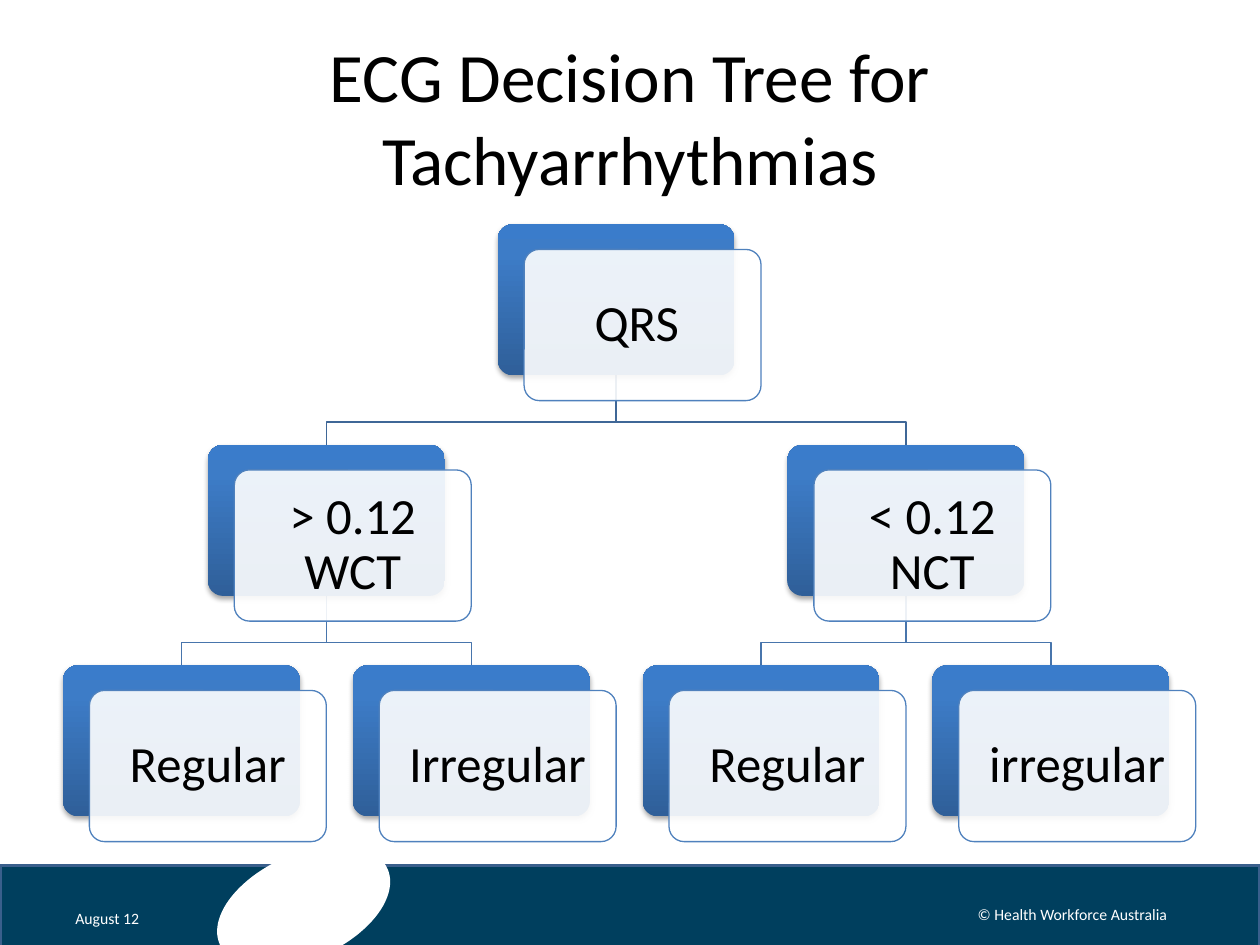
import pptx
import pptx.util
import pptx.dml.color
import pptx.enum.shapes
import pptx.enum.text
import pptx.oxml
import pptx.oxml.ns

Inches = pptx.util.Inches
SHAPES = pptx.enum.shapes.MSO_SHAPE
ALIGN = pptx.enum.text.PP_ALIGN
MIDDLE = pptx.enum.text.MSO_ANCHOR.MIDDLE
NAMESPACE = pptx.oxml.ns.nsdecls("a")

# Tree grid: columns may be fractional, so a parent sits between its children
LEFT, TOP = 0.5, 1.78
COLUMN, ROW = 2.3, 1.75
NODE_WIDTH, NODE_HEIGHT = 1.88, 1.2
CARD_SHIFT = 0.2
ELBOW_DROP = 0.37

# Label, column, row and index of the parent
NODES = [
    ("QRS ", 1.5, 0, None),
    ("> 0.12 WCT", 0.5, 1, 0),
    ("< 0.12 NCT", 2.5, 1, 0),
    ("Regular", 0, 2, 1),
    ("Irregular", 1, 2, 1),
    ("Regular", 2, 2, 2),
    ("irregular", 3, 2, 2),
]
BRANCH_COLORS = {1: "3F6797", 2: "4875AC"}
GRADIENT = [(0, "2F5F99"), (80, "3D7CC7"), (100, "3A7CCB")]


def color(value):
    return pptx.dml.color.RGBColor.from_string(value)


def add_block(page, kind, left, top, width, height, fill=None, line=None, weight=0.75):
    block = page.shapes.add_shape(
        kind, Inches(left), Inches(top), Inches(width), Inches(height))
    block.shadow.inherit = False
    if fill:
        block.fill.solid()
        block.fill.fore_color.rgb = color(fill)
    if line:
        block.line.color.rgb = color(line)
        block.line.width = pptx.util.Pt(weight)
    else:
        block.line.fill.background()
    return block


def write_text(box, text, size=9, fill="000000", align=ALIGN.CENTER, inset=0.1, spacing=1.0):
    frame = box.text_frame
    frame.word_wrap = True
    frame.vertical_anchor = MIDDLE
    frame.margin_left = frame.margin_right = Inches(inset)
    para = frame.paragraphs[0]
    para.alignment = align
    para.line_spacing = spacing
    span = para.add_run()
    span.text = text
    span.font.size = pptx.util.Pt(size)
    span.font.name = "Calibri"
    span.font.color.rgb = color(fill)


def add_label(page, text, left, top, width, height, **style):
    box = page.shapes.add_textbox(
        Inches(left), Inches(top), Inches(width), Inches(height))
    write_text(box, text, **style)


def set_gradient(block):
    """Vertical gradient that starts at the bottom edge."""
    stops = "".join(
        f'<a:gs pos="{share * 1000}"><a:srgbClr val="{value}"/></a:gs>'
        for share, value in GRADIENT)
    gradient = pptx.oxml.parse_xml(
        f'<a:gradFill {NAMESPACE} rotWithShape="1"><a:gsLst>{stops}</a:gsLst>'
        '<a:lin ang="16200000" scaled="0"/></a:gradFill>')
    block.fill.background()
    properties = block._element.spPr
    properties.replace(properties.find(pptx.oxml.ns.qn("a:noFill")), gradient)


def set_shadow(block):
    effects = block._element.spPr.find(pptx.oxml.ns.qn("a:effectLst"))
    effects.append(pptx.oxml.parse_xml(
        f'<a:outerShdw {NAMESPACE} blurRad="39370" dist="22860" dir="5400000" '
        'rotWithShape="0"><a:srgbClr val="000000"><a:alpha val="35000"/>'
        '</a:srgbClr></a:outerShdw>'))


def set_opacity(block, percent):
    tint = block._element.spPr.find(".//" + pptx.oxml.ns.qn("a:srgbClr"))
    tint.append(pptx.oxml.parse_xml(f'<a:alpha {NAMESPACE} val="{percent * 1000}"/>'))


def node_corner(column, row):
    return LEFT + column * COLUMN, TOP + row * ROW


def add_node(page, text, column, row):
    left, top = node_corner(column, row)
    back = add_block(page, SHAPES.ROUNDED_RECTANGLE, left, top, NODE_WIDTH, NODE_HEIGHT)
    set_gradient(back)
    set_shadow(back)
    card = add_block(page, SHAPES.ROUNDED_RECTANGLE, left + CARD_SHIFT + 0.01,
                     top + CARD_SHIFT, NODE_WIDTH, NODE_HEIGHT,
                     fill="FFFFFF", line="4F81BD")
    set_opacity(card, 90)
    for block in (back, card):
        block.adjustments[0] = 0.1
    write_text(card, text, size=29, inset=0.16, spacing=0.9)


def add_branch(page, parent, child):
    """Elbow from the bottom of the parent to the top of the child."""
    start, top = node_corner(parent[1], parent[2])
    end, bottom = node_corner(child[1], child[2])
    start += NODE_WIDTH / 2
    end += NODE_WIDTH / 2
    top += NODE_HEIGHT
    bend = top + ELBOW_DROP
    corners = [(Inches(x), Inches(y)) for x, y in
               [(start, top), (start, bend), (end, bend), (end, bottom)]]
    builder = page.shapes.build_freeform(*corners[0])
    builder.add_line_segments(corners[1:], close=False)
    branch = builder.convert_to_shape()
    branch.shadow.inherit = False
    branch.fill.background()
    branch.line.color.rgb = color(BRANCH_COLORS[child[2]])
    branch.line.width = pptx.util.Pt(0.75)


def add_footer(page):
    add_block(page, SHAPES.RECTANGLE, 0, 6.87, 10, 0.65,
              fill="003F5E", line="3A5F8C", weight=2)
    ellipse = add_block(page, SHAPES.OVAL, 1.68, 6.78, 1.46, 0.83, fill="FFFFFF")
    ellipse.rotation = 335.7
    add_label(page, "August 12", 0.5, 7.14, 0.8, 0.29, fill="FFFFFF", align=ALIGN.LEFT)
    add_label(page, "© Health Workforce Australia", 7.44, 7.06, 2.14, 0.4, fill="FFFFFF")


def main():
    deck = pptx.Presentation()
    deck.slide_width, deck.slide_height = Inches(10), Inches(7.5)
    page = deck.slides.add_slide(deck.slide_layouts[6])

    # Footer band and title
    add_footer(page)
    add_label(page, "ECG Decision Tree for Tachyarrhythmias",
              0.5, 0.3, 9, 1.25, size=39.6, inset=0.15)

    # Decision tree: branches lie behind the nodes
    for node in NODES:
        if node[3] is not None:
            add_branch(page, NODES[node[3]], node)
    for text, column, row, _ in NODES:
        add_node(page, text, column, row)

    deck.save("out.pptx")


if __name__ == "__main__":
    main()
